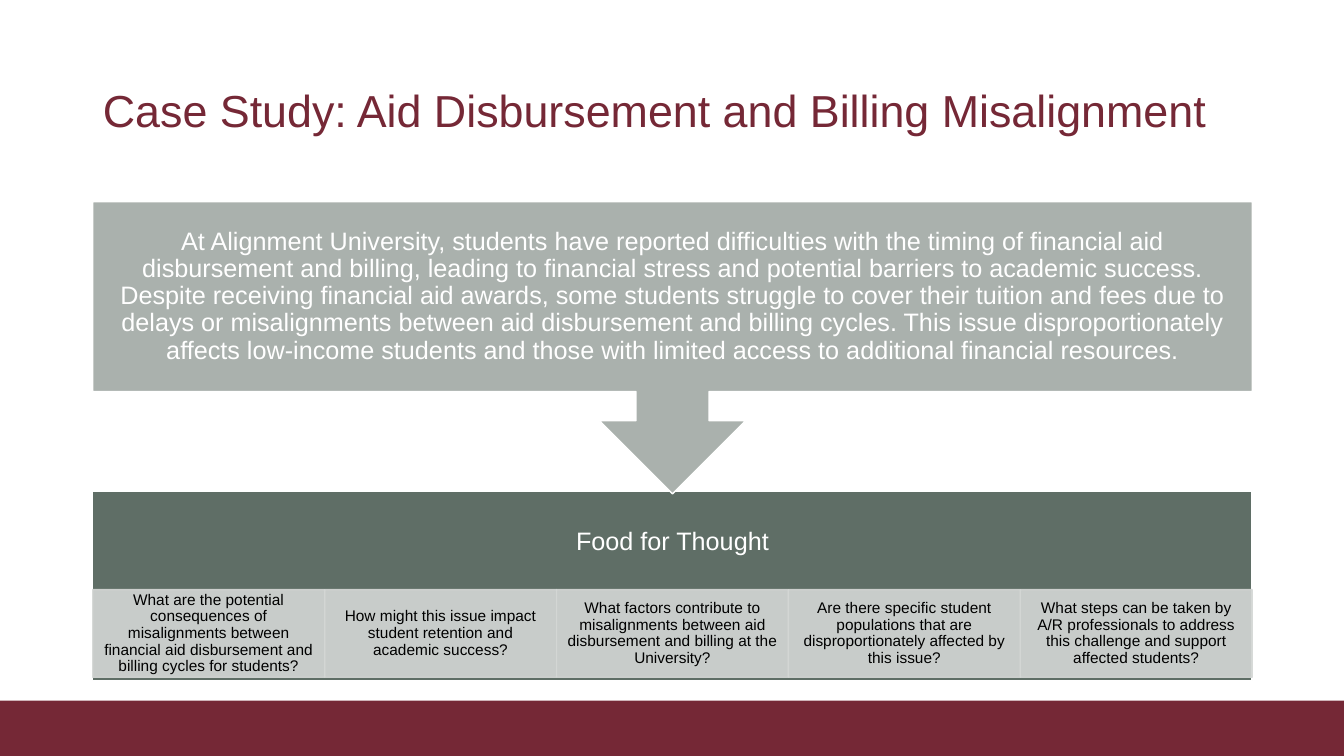
from dataclasses import dataclass

from lxml.etree import SubElement
from pptx import Presentation
from pptx.dml.color import RGBColor
from pptx.enum.shapes import MSO_SHAPE
from pptx.enum.text import MSO_ANCHOR, MSO_AUTO_SIZE, PP_ALIGN
from pptx.oxml.ns import qn
from pptx.shapes.autoshape import Shape
from pptx.slide import Slide
from pptx.util import Inches, Pt

COLORS = {
    "maroon": "752836",
    "dark green": "5F6E66",
    "grey green": "AAB1AD",
    "pale green": "D4D7D5",
    "white": "FFFFFF",
    "black": "000000",
}
FONT = "Arial"
LEFT, WIDTH = 0.92, 11.5
QUESTION_TOP, QUESTION_HEIGHT = 5.85, 0.87
QUESTIONS = [
    "What are the potential consequences of misalignments between financial aid disbursement and billing cycles for students?",
    "How might this issue impact student retention and academic success?",
    "What factors contribute to misalignments between aid disbursement and billing at the University?",
    "Are there specific student populations that are disproportionately affected by this issue?",
    "What steps can be taken by A/R professionals to address this challenge and support affected students?",
]
CASE = (
    "At Alignment University, students have reported difficulties with the timing of "
    "financial aid disbursement and billing, leading to financial stress and potential "
    "barriers to academic success. Despite receiving financial aid awards, some students "
    "struggle to cover their tuition and fees due to delays or misalignments between aid "
    "disbursement and billing cycles. This issue disproportionately affects low-income "
    "students and those with limited access to additional financial resources."
)


@dataclass
class Panel:
    left: float
    top: float
    width: float
    height: float
    fill: str
    line: str | None = "white"
    text: str = ""
    size: int = 18
    color: str = "white"
    side_inset: float = 0.14
    top_inset: float = 0.14
    bottom_inset: float = 0.14
    opacity: int = 100
    kind: MSO_SHAPE = MSO_SHAPE.RECTANGLE


def rgb(name: str) -> RGBColor:
    return RGBColor.from_string(COLORS[name])


def write_text(shape: Shape, text: str, size: int, color: str, alignment: PP_ALIGN) -> None:
    frame = shape.text_frame
    frame.text = text
    frame.word_wrap = True
    frame.auto_size = MSO_AUTO_SIZE.NONE
    frame.vertical_anchor = MSO_ANCHOR.MIDDLE
    paragraph = frame.paragraphs[0]
    paragraph.alignment = alignment
    paragraph.line_spacing = 0.9
    font = paragraph.runs[0].font
    font.name = FONT
    font.size = Pt(size)
    font.color.rgb = rgb(color)


def set_opacity(shape: Shape, percent: int) -> None:
    for color in shape.element.spPr.iter(qn("a:srgbClr")):
        SubElement(color, qn("a:alpha")).set("val", str(percent * 1000))


def draw_panel(slide: Slide, panel: Panel) -> None:
    shape = slide.shapes.add_shape(
        panel.kind, Inches(panel.left), Inches(panel.top), Inches(panel.width), Inches(panel.height)
    )
    shape.shadow.inherit = False
    shape.fill.solid()
    shape.fill.fore_color.rgb = rgb(panel.fill)
    if panel.line:
        shape.line.color.rgb = rgb(panel.line)
        shape.line.width = Pt(1)
    else:
        shape.line.fill.background()
    if panel.opacity < 100:
        set_opacity(shape, panel.opacity)
    if panel.text:
        frame = shape.text_frame
        frame.margin_left = frame.margin_right = Inches(panel.side_inset)
        frame.margin_top = Inches(panel.top_inset)
        frame.margin_bottom = Inches(panel.bottom_inset)
        write_text(shape, panel.text, panel.size, panel.color, PP_ALIGN.CENTER)


def main() -> None:
    presentation = Presentation()
    presentation.slide_width = Inches(13.33)
    presentation.slide_height = Inches(7.5)
    slide = presentation.slides.add_slide(presentation.slide_layouts[5])

    title = slide.shapes.title
    title.left, title.top = Inches(LEFT), Inches(0.4)
    title.width, title.height = Inches(WIDTH), Inches(1.45)
    write_text(
        title, "Case Study: Aid Disbursement and Billing Misalignment", 32, "maroon", PP_ALIGN.LEFT
    )

    question_width = WIDTH / len(QUESTIONS)
    footer = Panel(0, 6.95, 13.33, 0.55, "maroon", line=None)
    thought = Panel(LEFT, 4.87, WIDTH, 1.88, "dark green", text="Food for Thought", bottom_inset=1)
    questions = [
        Panel(
            LEFT + index * question_width, QUESTION_TOP, question_width, QUESTION_HEIGHT,
            "pale green", line="pale green", text=question, size=11, color="black",
            side_inset=0.09, top_inset=0.02, bottom_inset=0.02, opacity=90,
        )
        for index, question in enumerate(QUESTIONS)
    ]
    case = Panel(
        LEFT, 2, WIDTH, 2.9, "grey green", text=CASE, kind=MSO_SHAPE.DOWN_ARROW_CALLOUT
    )
    for panel in [footer, thought, *questions, case]:
        draw_panel(slide, panel)

    presentation.save("out.pptx")


if __name__ == "__main__":
    main()
